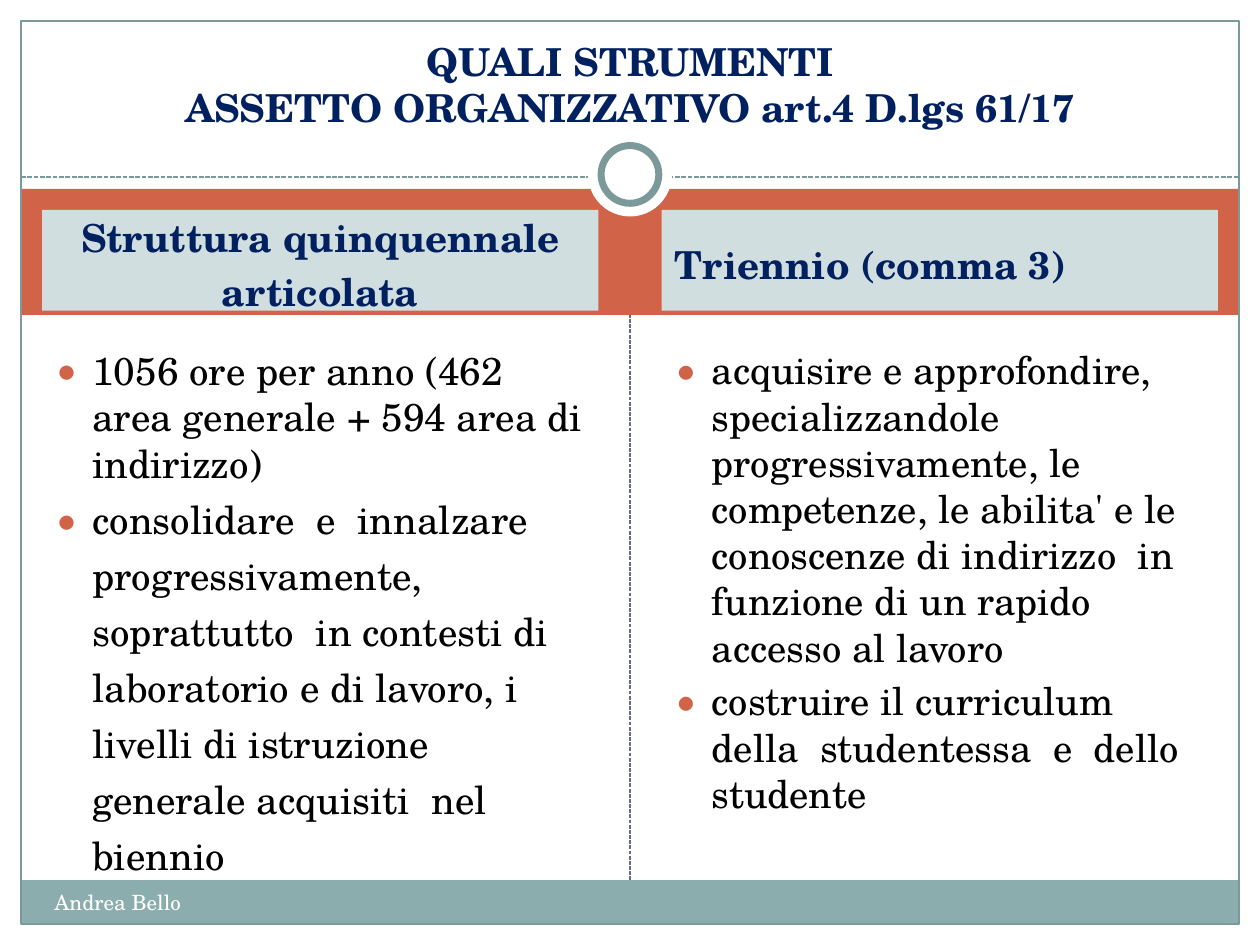
from lxml.etree import SubElement
from pptx import Presentation
from pptx.dml.color import RGBColor
from pptx.enum.dml import MSO_LINE
from pptx.enum.shapes import MSO_CONNECTOR, MSO_SHAPE
from pptx.enum.text import MSO_ANCHOR, MSO_AUTO_SIZE, PP_ALIGN
from pptx.oxml.ns import qn
from pptx.util import Pt

HUES = {
    "white": "FFFFFF", "black": "000000", "navy": "002060", "rust": "D16349",
    "sage": "8CADAE", "pale": "D1DEDF", "edge": "7C999A", "slate": "646B86",
}
FONT = "TeX Gyre Schola"
WIDE, HIGH = 720, 540
EDGE = 12
MID = WIDE / 2
COL = 318
LEFT = 24
RIGHT = WIDE - LEFT - COL
HUB = 99.7  # height of the ring's centre


def hue(name):
    return RGBColor.from_string(HUES[name])


class Deck:
    def __init__(self):
        self.prs = Presentation()
        self.prs.slide_width, self.prs.slide_height = Pt(WIDE), Pt(HIGH)
        self.slide = self.prs.slides.add_slide(self.prs.slide_layouts[4])
        self.shapes = self.slide.shapes

    def shape(self, kind, box, fill=None, line=None, width=0.75):
        item = self.shapes.add_shape(kind, *map(Pt, box))
        item.shadow.inherit = False
        if fill:
            item.fill.solid()
            item.fill.fore_color.rgb = hue(fill)
        else:
            item.fill.background()
        if line:
            item.line.color.rgb = hue(line)
            item.line.width = Pt(width)
        else:
            item.line.fill.background()

    def disc(self, size, **look):
        """Draw a circle centred on the ring's place."""
        box = (MID - size / 2, HUB - size / 2, size, size)
        self.shape(MSO_SHAPE.OVAL, box, "white", **look)

    def dash(self, start, end, color, width):
        line = self.shapes.add_connector(
            MSO_CONNECTOR.STRAIGHT, *map(Pt, start + end))
        line.line.color.rgb = hue(color)
        line.line.width = Pt(width)
        line.line.dash_style = MSO_LINE.SQUARE_DOT
        SubElement(line.element.spPr, qn("a:effectLst"))

    def holder(self, idx, box):
        """Place a template placeholder in front of what is drawn so far."""
        item = next(p for p in self.slide.placeholders
                    if p.placeholder_format.idx == idx)
        item.left, item.top, item.width, item.height = map(Pt, box)
        self.shapes.element.append(item.element)
        frame = item.text_frame
        frame.word_wrap = True
        frame.auto_size = MSO_AUTO_SIZE.NONE
        return item

    def style(self, para, size, color, bold=False):
        font = para.font
        font.name, font.size, font.bold = FONT, Pt(size), bold
        font.color.rgb = hue(color)

    def title(self, text, box):
        frame = self.holder(0, box).text_frame
        frame.text = text
        frame.vertical_anchor = MSO_ANCHOR.BOTTOM
        para = frame.paragraphs[0]
        para.alignment = PP_ALIGN.CENTER
        self.style(para, 22, "navy", True)

    def head(self, idx, left, text, align):
        item = self.holder(idx, (left, 120, COL, 57.6))
        item.fill.solid()
        item.fill.fore_color.rgb = hue("pale")
        frame = item.text_frame
        frame.text = text
        frame.vertical_anchor = MSO_ANCHOR.MIDDLE
        frame.margin_top = Pt(8)
        for para in frame.paragraphs:
            para.alignment = align
            para.space_before = Pt(4.4)
            self.style(para, 22, "navy", True)

    def bullet(self, para):
        props = para._p.get_or_add_pPr()
        props.set("marL", str(Pt(21.6)))
        props.set("indent", str(-Pt(21.6)))
        tint = SubElement(props, qn("a:buClr"))
        SubElement(tint, qn("a:srgbClr"), val=HUES["rust"])
        SubElement(props, qn("a:buSzPct"), val="85000")
        SubElement(props, qn("a:buFont"), typeface=FONT)
        SubElement(props, qn("a:buChar"), char="●")

    def points(self, idx, left, items, size, gap):
        """Fill a bulleted column; items pair a text with its line spacing."""
        frame = self.holder(idx, (left, 194.4, COL, 301)).text_frame
        frame.text = "\n".join(text for text, _ in items)
        for para, (_, pitch) in zip(frame.paragraphs, items):
            para.line_spacing = pitch
            para.space_before = Pt(gap)
            self.bullet(para)
            self.style(para, size, "black")

    def label(self, text, box):
        frame = self.shapes.add_textbox(*map(Pt, box)).text_frame
        frame.word_wrap = True
        frame.text = text
        self.style(frame.paragraphs[0], 12, "white")


def main():
    deck = Deck()
    inner = WIDE - 2 * EDGE
    rect = MSO_SHAPE.RECTANGLE

    deck.dash((MID, 503), (MID, 173.5), "slate", 0.75)
    deck.shape(rect, (EDGE, 108, inner, 72), "rust")
    deck.shape(rect, (EDGE, 503, inner, 25), "sage")
    deck.dash((EDGE, 101), (WIDE - EDGE, 101), "edge", 0.9)
    deck.shape(rect, (EDGE, EDGE, inner, HIGH - 2 * EDGE), line="edge")
    deck.disc(48)
    deck.disc(33, line="edge", width=4)

    deck.head(1, LEFT, "Struttura quinquennale\narticolata", PP_ALIGN.CENTER)
    deck.head(3, RIGHT, "Triennio (comma 3)", PP_ALIGN.LEFT)
    deck.label("Andrea Bello", (LEFT, 504.7, 282, 29))
    deck.points(2, LEFT, [
        ("1056 ore per anno (462 area generale + 594 area di indirizzo)", 1.0),
        ("consolidare  e  innalzare  progressivamente,  soprattutto  in "
         "contesti di laboratorio e di lavoro, i livelli di istruzione "
         "generale acquisiti  nel  biennio", 1.2),
    ], 22.2, 0)
    deck.points(4, RIGHT, [
        ("acquisire e approfondire,  specializzandole  progressivamente, le "
         "competenze, le abilita' e le conoscenze di indirizzo  in  funzione "
         "di un rapido accesso al lavoro", 1.0),
        ("costruire il curriculum della  studentessa  e  dello  studente", 1.0),
    ], 22, 4.4)
    deck.title("QUALI STRUMENTI\vASSETTO ORGANIZZATIVO art.4 D.lgs 61/17",
               (LEFT, 18, WIDE - 2 * LEFT, 60))
    deck.prs.save("out.pptx")


if __name__ == "__main__":
    main()
